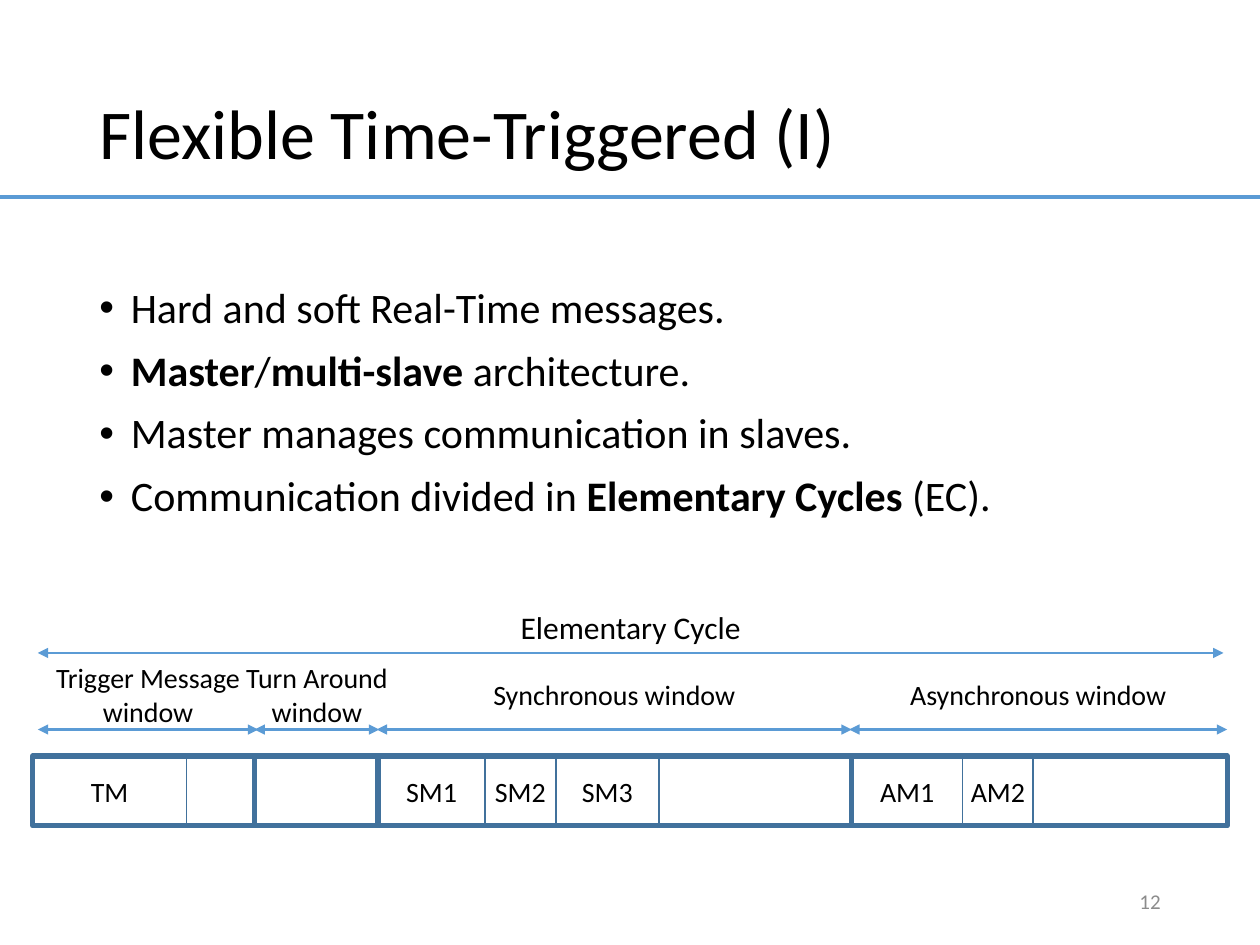
"""Builds the Flexible Time-Triggered slide; positions are percentages of the slide's size."""
from lxml import etree
from pptx import Presentation
from pptx.dml.color import RGBColor
from pptx.enum.shapes import MSO_CONNECTOR, MSO_SHAPE
from pptx.enum.text import MSO_ANCHOR, PP_ALIGN
from pptx.oxml.ns import qn
from pptx.util import Inches, Pt

STRAIGHT, RECT = MSO_CONNECTOR.STRAIGHT, MSO_SHAPE.RECTANGLE
TOP, MIDDLE = MSO_ANCHOR.TOP, MSO_ANCHOR.MIDDLE
LEFT, CENTER, RIGHT = PP_ALIGN.LEFT, PP_ALIGN.CENTER, PP_ALIGN.RIGHT

WIDTH, HEIGHT = 10, 7.5
FONT = "Calibri"
COLORS = {"text": "000000", "arrow": "5B9BD5", "frame": "41719C", "number": "8C8C8C"}

BULLETS = [
    [("Hard and soft Real-Time messages.", False)],
    [("Master", True), ("/", False), ("multi-slave", True), (" architecture.", False)],
    [("Master manages communication in slaves.", False)],
    [("Communication divided in ", False), ("Elementary Cycles ", True), ("(EC).", False)],
]
BAR_LEFT, BAR_RIGHT, BAR_TOP, BAR_BOTTOM = 2.6, 97.4, 80, 87.4
WINDOW_EDGES = [20.2, 30, 67.6]
WINDOWS = [
    ("Trigger Message window", 3, 20.5, 0),
    ("Turn Around window", 20.2, 30.1, 2.3),
    ("Synchronous window", 29.9, 67.6, 0),
    ("Asynchronous window", 67.4, 97.4, 0),
]
MESSAGES = [
    ("TM", BAR_LEFT, 14.8),
    ("SM1", 30, 38.5),
    ("SM2", 38.5, 44.1),
    ("SM3", 44.1, 52.3),
    ("AM1", 67.6, 76.4),
    ("AM2", 76.4, 82),
]


def across(share):
    """Turn a percentage of the slide's width into a length."""
    return Inches(WIDTH * share / 100)


def down(share):
    """Turn a percentage of the slide's height into a length."""
    return Inches(HEIGHT * share / 100)


def color(name):
    """Look up a named colour."""
    return RGBColor.from_string(COLORS[name])


def add_line(s, x1, y1, x2, y2, name, weight, arrows=False):
    """Add a straight line, with arrowheads at both ends if wanted."""
    sp = s.shapes.add_connector(STRAIGHT, across(x1), down(y1), across(x2), down(y2))
    sp.line.color.rgb = color(name)
    sp.line.width = Pt(weight)
    if arrows:
        ln = sp.line._get_or_add_ln()
        for tag in ("a:headEnd", "a:tailEnd"):
            etree.SubElement(ln, qn(tag), type="triangle")
    etree.SubElement(sp._element.spPr, qn("a:effectLst"))


def add_box(s, x1, y1, x2, y2, anchor=MIDDLE, inset=0.0):
    """Add an empty wrapping text box and return its text frame."""
    sp = s.shapes.add_textbox(across(x1), down(y1), across(x2 - x1), down(y2 - y1))
    tf = sp.text_frame
    tf.word_wrap = True
    tf.vertical_anchor = anchor
    tf.margin_left = tf.margin_right = Inches(inset)
    tf.margin_top = tf.margin_bottom = Inches(inset / 2)
    return tf


def add_run(p, text, size, name="text", bold=False):
    """Add one formatted run to a paragraph."""
    r = p.add_run()
    r.text = text
    r.font.name = FONT
    r.font.size = Pt(size)
    r.font.bold = bold
    r.font.color.rgb = color(name)


def add_label(s, text, x1, y1, x2, y2, size=16, align=CENTER, name="text", inset=0.0):
    """Add a one-paragraph label and return the paragraph."""
    p = add_box(s, x1, y1, x2, y2, inset=inset).paragraphs[0]
    p.alignment = align
    add_run(p, text, size, name)
    return p


def add_bullets(s, x1, y1, x2, y2):
    """Add the bulleted list."""
    tf = add_box(s, x1, y1, x2, y2, TOP, 0.1)
    for i, runs in enumerate(BULLETS):
        p = tf.add_paragraph() if i else tf.paragraphs[0]
        p.line_spacing = 0.9
        p.space_before = Pt(10)
        pPr = p._p.get_or_add_pPr()
        pPr.set("marL", str(Inches(0.25)))
        pPr.set("indent", str(-Inches(0.25)))
        etree.SubElement(pPr, qn("a:buFont"), typeface="Arial")
        etree.SubElement(pPr, qn("a:buChar"), char="•")
        for text, bold in runs:
            add_run(p, text, 24, bold=bold)


def add_bar(s):
    """Add the cycle bar with its windows and messages."""
    sp = s.shapes.add_shape(RECT, across(BAR_LEFT), down(BAR_TOP),
                            across(BAR_RIGHT - BAR_LEFT), down(BAR_BOTTOM - BAR_TOP))
    sp.shadow.inherit = False
    sp.fill.background()
    sp.line.color.rgb = color("frame")
    sp.line.width = Pt(3)
    for x in WINDOW_EDGES:
        add_line(s, x, BAR_TOP, x, BAR_BOTTOM, "frame", 3)
    for text, x1, x2 in MESSAGES:
        add_line(s, x2, BAR_TOP, x2, BAR_BOTTOM, "frame", 1)
        add_label(s, text, x1, BAR_TOP, x2, BAR_BOTTOM)


def add_spans(s):
    """Add the double arrows and names of the cycle and its windows."""
    add_line(s, 3, 69.1, 97.1, 69.1, "arrow", 1.5, True)
    add_label(s, "Elementary Cycle", 3, 63.6, 97.1, 69.1, 18)
    for text, x1, x2, pad in WINDOWS:
        add_line(s, x1, 77.2, x2, 77.2, "arrow", 1.5, True)
        add_label(s, text, x1 - pad, 69.9, x2 + pad, 77.1)


def main():
    """Build and save the slide."""
    prs = Presentation()
    prs.slide_width, prs.slide_height = Inches(WIDTH), Inches(HEIGHT)
    s = prs.slides.add_slide(prs.slide_layouts[6])
    add_line(s, 0, 20.8, 100, 20.8, "arrow", 2.25)
    p = add_label(s, "Flexible Time-Triggered (I)", 6.9, 4.4, 93.1, 24.5, 40, LEFT, inset=0.1)
    p.line_spacing = 0.9
    add_bullets(s, 6.9, 29.7, 95.1, 63.5)
    add_spans(s)
    add_bar(s)
    add_label(s, "12", 70.6, 92.7, 93.1, 98, 12, RIGHT, "number", 0.1)
    prs.save("out.pptx")


if __name__ == "__main__":
    main()
